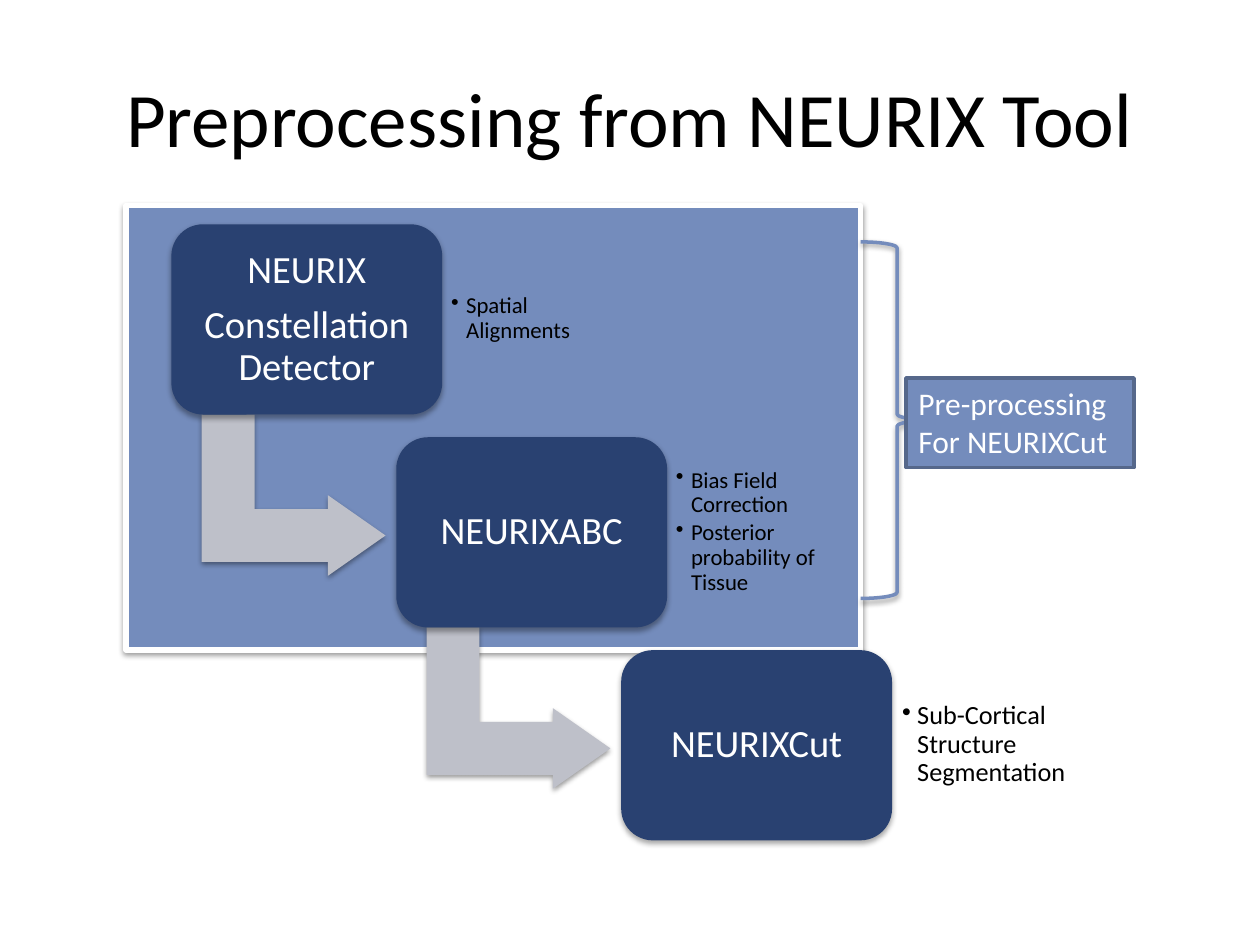
from dataclasses import dataclass

from lxml import etree
from pptx import Presentation
from pptx.dml.color import RGBColor
from pptx.enum.shapes import MSO_SHAPE
from pptx.enum.text import MSO_ANCHOR, PP_ALIGN
from pptx.oxml.ns import qn
from pptx.util import Inches, Pt

RECTANGLE = MSO_SHAPE.RECTANGLE
ROUNDED = MSO_SHAPE.ROUNDED_RECTANGLE
BENT_ARROW = MSO_SHAPE.BENT_UP_ARROW
BRACE = MSO_SHAPE.RIGHT_BRACE
MIDDLE, TOP = MSO_ANCHOR.MIDDLE, MSO_ANCHOR.TOP
LEFT, CENTER = PP_ALIGN.LEFT, PP_ALIGN.CENTER

FONT = "Calibri"
PALE_BLUE, NAVY, GREY = "748CBC", "294171", "BEC0C9"
LABEL_BORDER, WHITE, BLACK = "56688B", "FFFFFF", "000000"

FIRST_LEFT, FIRST_TOP = 1.36, 1.78
STEP_RIGHT, STEP_DOWN = 1.785, 1.69
BOX_WIDTH, BOX_HEIGHT = 2.15, 1.51


@dataclass(frozen=True)
class Step:
    names: tuple[str, ...]
    details: tuple[str, ...]
    detail_size: int = 13
    detail_inset: float = 0.07


STEPS = (
    Step(("NEURIX", "Constellation Detector"), ("Spatial Alignments",)),
    Step(("NEURIXABC",),
         ("Bias Field Correction", "Posterior probability of Tissue")),
    Step(("NEURIXCut",), ("Sub-Cortical Structure Segmentation",), 15, 0.08),
)


def color(value: str) -> RGBColor:
    return RGBColor.from_string(value)


def add_shadow(shape, opacity: int = 38, distance: float = 1.6) -> None:
    effects = shape._element.spPr.find(qn("a:effectLst"))
    shadow = etree.SubElement(
        effects, qn("a:outerShdw"), blurRad=str(Pt(3.1)),
        dist=str(Pt(distance)), dir="5400000", rotWithShape="0")
    shade = etree.SubElement(shadow, qn("a:srgbClr"), val=BLACK)
    etree.SubElement(shade, qn("a:alpha"), val=str(opacity * 1000))


def add_shape(slide, kind, left: float, top: float, width: float,
              height: float, fill: str | None = None, line: str | None = None,
              line_width: float = 2):
    shape = slide.shapes.add_shape(
        kind, Inches(left), Inches(top), Inches(width), Inches(height))
    shape.shadow.inherit = False
    if fill:
        shape.fill.solid()
        shape.fill.fore_color.rgb = color(fill)
    else:
        shape.fill.background()
    if line:
        shape.line.color.rgb = color(line)
        shape.line.width = Pt(line_width)
    else:
        shape.line.fill.background()
    return shape


def set_insets(frame, horizontal: float, vertical: float) -> None:
    frame.margin_left = frame.margin_right = Inches(horizontal)
    frame.margin_top = frame.margin_bottom = Inches(vertical)


def write(frame, texts: tuple[str, ...], size: float, text_color: str,
          alignment=LEFT, anchor=MIDDLE, line_spacing: float = 1,
          space_after: float = 0) -> None:
    frame.word_wrap = True
    frame.vertical_anchor = anchor
    for index, text in enumerate(texts):
        paragraph = frame.add_paragraph() if index else frame.paragraphs[0]
        paragraph.alignment = alignment
        paragraph.line_spacing = line_spacing
        paragraph.space_after = Pt(space_after)
        run = paragraph.add_run()
        run.text = text
        run.font.name = FONT
        run.font.size = Pt(size)
        run.font.color.rgb = color(text_color)


def add_bullets(frame) -> None:
    for paragraph in frame.paragraphs:
        properties = paragraph._p.get_or_add_pPr()
        properties.set("marL", str(Inches(0.12)))
        properties.set("indent", str(Inches(-0.12)))
        etree.SubElement(properties, qn("a:buChar"), char="•")


def add_arrow(slide, left: float, top: float) -> None:
    """Add the bent arrow leading from the box at this corner to the next."""
    arrow = add_shape(slide, BENT_ARROW, left + 0.33, top + 1.42,
                      1.28, 1.46, GREY)
    arrow.rotation = 90
    for index, value in enumerate((0.328, 0.25, 0.358)):
        arrow.adjustments[index] = value
    add_shadow(arrow)


def add_step(slide, step: Step, left: float, top: float) -> None:
    box = add_shape(slide, ROUNDED, left, top, BOX_WIDTH, BOX_HEIGHT, NAVY)
    add_shadow(box, 35, 1.8)
    set_insets(box.text_frame, 0.09, 0.09)
    write(box.text_frame, step.names, 22, WHITE, CENTER,
          line_spacing=0.9, space_after=7.7)

    details = slide.shapes.add_textbox(
        Inches(left + BOX_WIDTH), Inches(top + 0.14),
        Inches(1.57), Inches(1.22)).text_frame
    set_insets(details, step.detail_inset, step.detail_inset)
    write(details, step.details, step.detail_size, BLACK,
          line_spacing=0.9, space_after=step.detail_size * 0.15)
    add_bullets(details)


def main() -> None:
    presentation = Presentation()
    presentation.slide_width = Inches(10)
    presentation.slide_height = Inches(7.5)
    slide = presentation.slides.add_slide(presentation.slide_layouts[5])

    title = slide.shapes.title
    title.left, title.top = Inches(0.5), Inches(0.3)
    title.width, title.height = Inches(9), Inches(1.25)
    write(title.text_frame, ("Preprocessing from NEURIX Tool",), 44, BLACK,
          CENTER)

    panel = add_shape(slide, RECTANGLE, 1, 1.63, 5.83, 3.53,
                      PALE_BLUE, WHITE, 3)
    add_shadow(panel)

    for index, step in enumerate(STEPS):
        left = FIRST_LEFT + index * STEP_RIGHT
        top = FIRST_TOP + index * STEP_DOWN
        if index < len(STEPS) - 1:
            add_arrow(slide, left, top)
        add_step(slide, step, left, top)

    brace = add_shape(slide, BRACE, 6.83, 1.92, 0.58, 2.83, line=PALE_BLUE)
    add_shadow(brace)
    label = add_shape(slide, RECTANGLE, 7.19, 3, 1.81, 0.71,
                      PALE_BLUE, LABEL_BORDER)
    set_insets(label.text_frame, 0.1, 0.05)
    write(label.text_frame, ("Pre-processing For NEURIXCut",), 18, WHITE,
          anchor=TOP)

    presentation.save("out.pptx")


if __name__ == "__main__":
    main()
